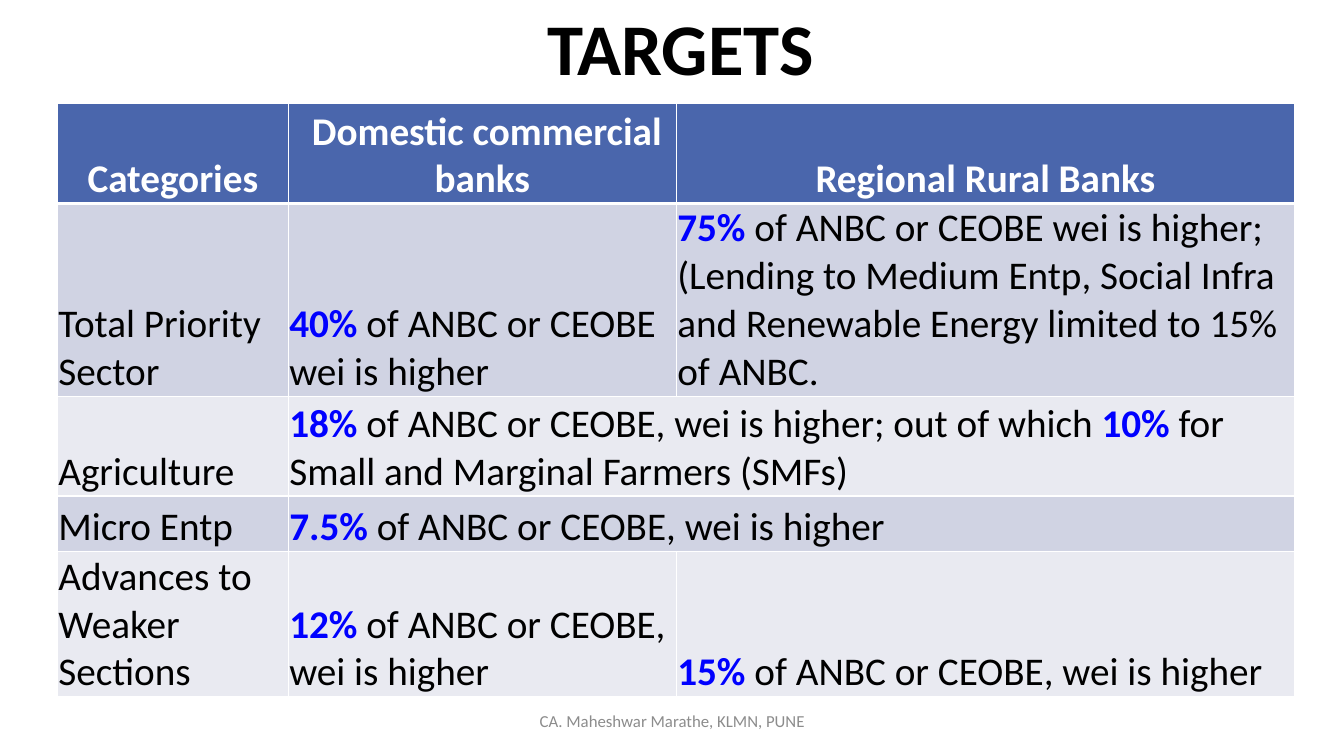
from itertools import product

from lxml.etree import SubElement
from pptx import Presentation
from pptx.dml.color import RGBColor
from pptx.enum.text import MSO_ANCHOR, MSO_AUTO_SIZE, PP_ALIGN
from pptx.oxml.ns import qn
from pptx.util import Inches, Pt

HUES = {
    "ink": "000000",
    "head": "4A66AC",
    "dark": "D0D3E3",
    "pale": "E9EAF1",
    "white": "FFFFFF",
    "blue": "0000FF",
    "grey": "8C8C8C",
}
COLS, ROWS = 80, 60
WIDTHS = [13.74, 23.1, 36.78]
HEIGHTS = [7.92, 15.04, 7.92, 4.4, 11.52]
TARGETS = [
    ["Categories", " Domestic commercial banks", "Regional Rural Banks"],
    [
        "Total Priority Sector",
        "*40%* of ANBC or CEOBE wei is higher",
        "*75%* of ANBC or CEOBE wei is higher; (Lending to Medium Entp, "
        "Social Infra and Renewable Energy limited to 15% of ANBC.",
    ],
    [
        "Agriculture",
        "*18%* of ANBC or CEOBE, wei is higher; out of which *10% *for "
        "Small and Marginal Farmers (SMFs)",
    ],
    ["Micro Entp", "*7.5% *of ANBC or CEOBE, wei is higher"],
    [
        "Advances to Weaker Sections",
        "*12%* of ANBC or CEOBE, wei is higher",
        "*15%* of ANBC or CEOBE, wei is higher",
    ],
]


def hue(name):
    return RGBColor.from_string(HUES[name])


class Deck:
    face = "Calibri"

    def __init__(self):
        self.show = Presentation()
        self.show.slide_width = Inches(13.33)
        self.show.slide_height = Inches(7.5)
        self.slide = self.show.slides.add_slide(self.show.slide_layouts[5])

    def across(self, count):
        return round(self.show.slide_width * count / COLS)

    def down(self, count):
        return round(self.show.slide_height * count / ROWS)

    def place(self, x, y, wide, high):
        return self.across(x), self.down(y), self.across(wide), self.down(high)

    def style(self, para, size, color, bold=False, align=PP_ALIGN.CENTER):
        para.alignment = align
        font = para.font
        font.name, font.size, font.bold = self.face, Pt(size), bold
        font.color.rgb = hue(color)

    def letter(self, shape, text, size, color, bold=False):
        frame = shape.text_frame
        frame.text = text
        frame.word_wrap = True
        frame.auto_size = MSO_AUTO_SIZE.NONE
        frame.vertical_anchor = MSO_ANCHOR.MIDDLE
        para = frame.paragraphs[0]
        self.style(para, size, color, bold)
        return para

    def title(self, text, *area):
        shape = self.slide.shapes.title
        shape.left, shape.top, shape.width, shape.height = self.place(*area)
        self.letter(shape, text, 52, "ink", True).line_spacing = 0.9

    def label(self, text, *area):
        shape = self.slide.shapes.add_textbox(*self.place(*area))
        self.letter(shape, text, 12, "grey").space_after = Pt(6)

    def edge(self, cell, top, base):
        props = cell._tc.get_or_add_tcPr()
        for side, width in zip("LRTB", (1, 1, top, base)):
            line = SubElement(props, qn(f"a:ln{side}"), w=str(Pt(width)))
            fill = SubElement(line, qn("a:solidFill"))
            SubElement(fill, qn("a:srgbClr"), val=HUES["white"])

    def cell(self, cell, row):
        self.edge(cell, 3 if row == 1 else 1, 3 if row == 0 else 1)
        cell.fill.solid()
        cell.fill.fore_color.rgb = hue(
            "head" if row == 0 else "dark" if row % 2 else "pale")
        cell.vertical_anchor = MSO_ANCHOR.BOTTOM
        cell.margin_left = cell.margin_right = cell.margin_top = Inches(0.01)
        cell.margin_bottom = 0

    def fill(self, cell, text, head):
        para = cell.text_frame.paragraphs[0]
        if head:
            self.style(para, 28, "white", True)
        else:
            self.style(para, 28, "ink", align=PP_ALIGN.LEFT)
        for spot, part in enumerate(text.split("*")):
            if part:
                run = para.add_run()
                run.text = part
                if spot % 2:
                    run.font.bold = True
                    run.font.color.rgb = hue("blue")

    def table(self, data, x, y, widths, heights):
        area = self.place(x, y, sum(widths), sum(heights))
        grid = self.slide.shapes.add_table(
            len(heights), len(widths), *area).table
        for col, wide in zip(grid.columns, widths):
            col.width = self.across(wide)
        for row, high in zip(grid.rows, heights):
            row.height = self.down(high)
        for row, col in product(range(len(heights)), range(len(widths))):
            self.cell(grid.cell(row, col), row)
        for row, texts in enumerate(data):
            for col, text in enumerate(texts):
                self.fill(grid.cell(row, col), text, row == 0)
            last = len(texts) - 1
            if last < len(widths) - 1:
                grid.cell(row, last).merge(grid.cell(row, len(widths) - 1))


def main():
    deck = Deck()
    deck.title("TARGETS", 6, 0, 69, 8.24)
    deck.label("CA. Maheshwar Marathe, KLMN, PUNE", 26.52, 55.6, 27, 3.2)
    deck.table(TARGETS, 3.42, 8.24, WIDTHS, HEIGHTS)
    deck.show.save("out.pptx")


if __name__ == "__main__":
    main()
